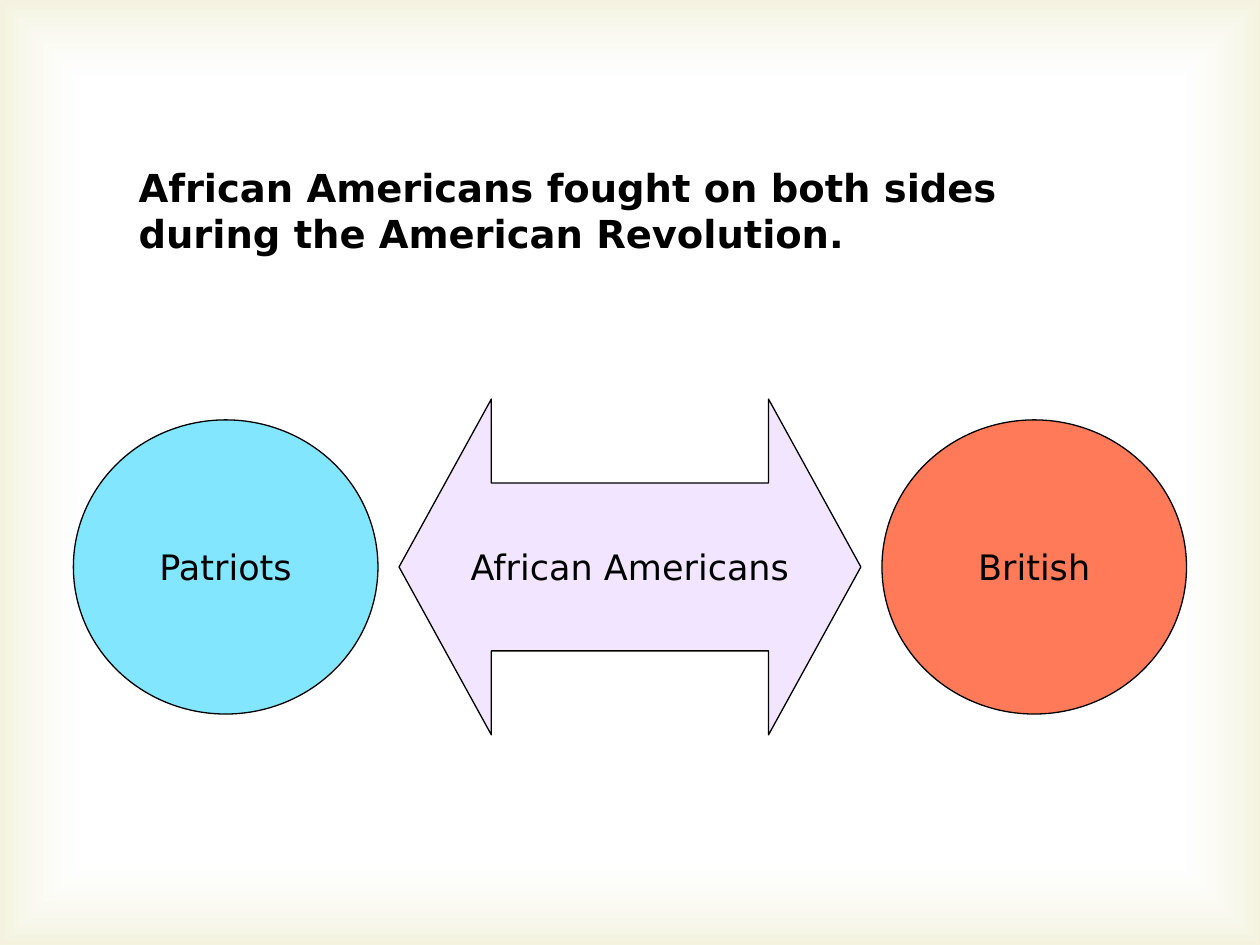
"""Build a slide showing African Americans between the two sides of the Revolution."""
from dataclasses import dataclass

import lxml.etree
import pptx
import pptx.dml.color
import pptx.enum.shapes
import pptx.enum.text
import pptx.oxml
import pptx.oxml.ns
import pptx.util
from pptx.util import Cm

SHAPE = pptx.enum.shapes.MSO_SHAPE
ALIGN = pptx.enum.text.PP_ALIGN
ANCHOR = pptx.enum.text.MSO_ANCHOR
AUTO = pptx.enum.text.MSO_AUTO_SIZE
qn = pptx.oxml.ns.qn

WIDTH, HEIGHT = 25.4, 19.05
MIDDLE = 11.43
CIRCLE_W, CIRCLE_H = 6.14, 5.93
MARGIN = 1.48
FONT = {"name": "DejaVu Sans", "size": pptx.util.Pt(20), "bold": False}
TITLE_FONT = {**FONT, "size": pptx.util.Pt(22), "bold": True}


@dataclass
class Figure:
    text: str
    kind: SHAPE
    left: float
    width: float
    height: float
    color: str
    alpha: int
    adjustments: tuple[float, ...] = ()


FIGURES = [
    Figure("African Americans", SHAPE.LEFT_RIGHT_ARROW, (WIDTH - 9.31) / 2,
           9.31, 6.77, "CC99FF", 25, (0.5, 0.275)),
    Figure("Patriots", SHAPE.OVAL, MARGIN, CIRCLE_W, CIRCLE_H, "00CCFF", 49),
    Figure("British", SHAPE.OVAL, WIDTH - MARGIN - CIRCLE_W, CIRCLE_W, CIRCLE_H, "FF3300", 65),
]


def rgb(color: str) -> pptx.dml.color.RGBColor:
    return pptx.dml.color.RGBColor.from_string(color)


def set_attrs(target, values: dict) -> None:
    for name, value in values.items():
        setattr(target, name, value)


def write(tf, text: str, frame: dict, align: ALIGN, font: dict) -> None:
    set_attrs(tf, frame)
    p = tf.paragraphs[0]
    p.alignment = align
    r = p.add_run()
    r.text = text
    set_attrs(r.font, font)
    r.font.color.rgb = rgb("000000")


def add_border_glow(s) -> None:
    sp = s.shapes.add_shape(SHAPE.RECTANGLE, 0, 0, Cm(WIDTH), Cm(HEIGHT))
    sp.shadow.inherit = False
    sp.line.fill.background()
    stops = "".join(
        f'<a:gs pos="{pos}000"><a:srgbClr val="{color}"><a:alpha val="{alpha}000"/></a:srgbClr></a:gs>'
        for pos, color, alpha in [(0, "FFFFFF", 11), (83, "FFFFFF", 11), (100, "D1CA75", 23)])
    gradient = pptx.oxml.parse_xml(
        f'<a:gradFill {pptx.oxml.ns.nsdecls("a")} rotWithShape="1"><a:gsLst>{stops}</a:gsLst>'
        '<a:path path="rect"><a:fillToRect l="50000" t="50000" r="50000" b="50000"/></a:path>'
        '</a:gradFill>')
    sp.element.spPr.find(qn("a:prstGeom")).addnext(gradient)
    sp.element.getparent().insert(2, sp.element)


def add_title(s, text: str) -> None:
    sp = s.shapes.title
    set_attrs(sp, {"left": Cm(2.54), "top": Cm(3.18), "width": Cm(20.32), "height": Cm(2.12)})
    frame = {"word_wrap": True, "vertical_anchor": ANCHOR.TOP, "auto_size": AUTO.SHAPE_TO_FIT_TEXT}
    write(sp.text_frame, text, frame, ALIGN.LEFT, TITLE_FONT)


def add_figure(s, fig: Figure) -> None:
    top = Cm(MIDDLE + 2.97 * 0 - fig.height / 2)
    sp = s.shapes.add_shape(fig.kind, Cm(fig.left), top, Cm(fig.width), Cm(fig.height))
    for i, value in enumerate(fig.adjustments):
        sp.adjustments[i] = value
    sp.shadow.inherit = False
    sp.fill.solid()
    sp.fill.fore_color.rgb = rgb(fig.color)
    color = sp.element.spPr.find(f'{qn("a:solidFill")}/{qn("a:srgbClr")}')
    lxml.etree.SubElement(color, qn("a:alpha"), val=f"{fig.alpha}000")
    sp.line.color.rgb = rgb("000000")
    sp.line.width = pptx.util.Pt(0.75)
    frame = {"word_wrap": False, "vertical_anchor": ANCHOR.MIDDLE}
    write(sp.text_frame, fig.text, frame, ALIGN.CENTER, FONT)


def main() -> None:
    prs = pptx.Presentation()
    set_attrs(prs, {"slide_width": Cm(WIDTH), "slide_height": Cm(HEIGHT)})
    s = prs.slides.add_slide(prs.slide_layouts[5])
    add_border_glow(s)
    add_title(s, "African Americans fought on both sides during the American Revolution.")
    for fig in FIGURES:
        add_figure(s, fig)
    prs.save("out.pptx")


if __name__ == "__main__":
    main()
